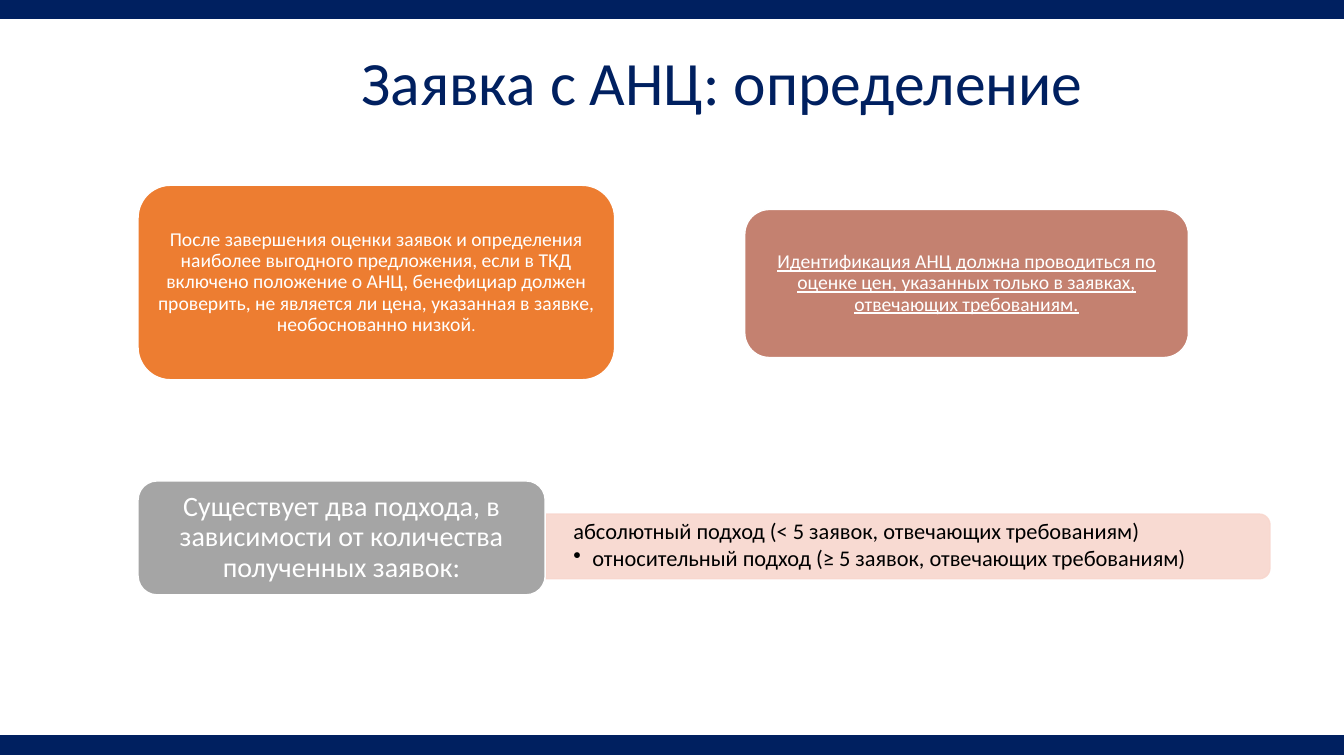
import pptx
import pptx.util
import pptx.dml.color
import pptx.enum.shapes
import pptx.enum.text
import pptx.oxml
import pptx.oxml.ns

Cm = pptx.util.Cm
Pt = pptx.util.Pt
RGBColor = pptx.dml.color.RGBColor
SHAPES = pptx.enum.shapes.MSO_SHAPE
ALIGN = pptx.enum.text.PP_ALIGN

NAVY = RGBColor(0x00, 0x20, 0x60)
ORANGE = RGBColor(0xED, 0x7D, 0x31)
ROSE = RGBColor(0xC4, 0x81, 0x70)
GRAY = RGBColor(0xA5, 0xA5, 0xA5)
PEACH = RGBColor(0xF8, 0xD7, 0xCE)
WHITE = RGBColor(0xFF, 0xFF, 0xFF)
BLACK = RGBColor(0x00, 0x00, 0x00)


def add_block(kind, left, top, width, height, fill, line):
    block = slide.shapes.add_shape(kind, Cm(left), Cm(top), Cm(width), Cm(height))
    block.shadow.inherit = False
    block.fill.solid()
    block.fill.fore_color.rgb = fill
    block.line.color.rgb = line
    block.line.width = Pt(1)
    return block


def write_text(box, lines, size, color, align, inset_x, inset_y):
    frame = box.text_frame
    frame.word_wrap = True
    frame.vertical_anchor = pptx.enum.text.MSO_ANCHOR.MIDDLE
    frame.margin_left = frame.margin_right = Cm(inset_x)
    frame.margin_top = frame.margin_bottom = Cm(inset_y)
    frame.text = "\n".join(lines)
    for para in frame.paragraphs:
        para.alignment = align
        para.line_spacing = 0.9
        for span in para.runs:
            span.font.name = "Calibri"
            span.font.size = Pt(size)
            span.font.color.rgb = color
    return frame.paragraphs


deck = pptx.Presentation()
deck.slide_width = Cm(33.87)
deck.slide_height = Cm(19.05)
slide = deck.slides.add_slide(deck.slide_layouts[6])

for top in (0, 18.55):
    add_block(SHAPES.RECTANGLE, 0, top, 33.87, 0.46, NAVY, NAVY)

title = slide.shapes.add_textbox(Cm(5.23), Cm(0.94), Cm(26.31), Cm(2.41))
write_text(title, ["Заявка с АНЦ: определение "], 44, NAVY, ALIGN.CENTER, 0.25, 0.13)

approach_bar = add_block(SHAPES.ROUND_2_SAME_RECTANGLE, 22.07, 4.65, 1.63, 18.24, PEACH, PEACH)
approach_bar.rotation = 90
for color in approach_bar.element.spPr.iter(pptx.oxml.ns.qn("a:srgbClr")):
    color.append(pptx.oxml.parse_xml(
        '<a:alpha xmlns:a="http://schemas.openxmlformats.org/drawingml/2006/main" val="90000"/>'))

approaches = slide.shapes.add_textbox(Cm(13.77), Cm(13.03), Cm(18.16), Cm(1.45))
absolute, relative = write_text(
    approaches,
    ["абсолютный подход (< 5 заявок, отвечающих требованиям)",
     "относительный подход (≥ 5 заявок, отвечающих требованиям)"],
    16, BLACK, ALIGN.LEFT, 0.68, 0)
absolute.space_after = Pt(2.4)
properties = relative._p.get_or_add_pPr()
properties.set("marL", str(Cm(0.48)))
properties.set("indent", str(-Cm(0.48)))
properties.append(pptx.oxml.parse_xml(
    '<a:buChar xmlns:a="http://schemas.openxmlformats.org/drawingml/2006/main" char="•"/>'))

cards = [
    (3.48, 4.67, 12.01, 4.9, ORANGE, 14, False,
     "После завершения оценки заявок и определения наиболее выгодного предложения, "
     "если в ТКД включено положение о АНЦ, бенефициар должен проверить, не является ли "
     "цена, указанная в заявке, необоснованно низкой"),
    (18.77, 5.28, 11.18, 3.73, ROSE, 14, True,
     "Идентификация АНЦ должна проводиться по оценке цен, указанных только в заявках, "
     "отвечающих требованиям."),
    (3.48, 12.12, 10.26, 2.87, GRAY, 20, False,
     "Существует два подхода, в зависимости от количества полученных заявок:"),
]
card_paras = []
for left, top, width, height, fill, size, underlined, text in cards:
    card = add_block(SHAPES.ROUNDED_RECTANGLE, left, top, width, height, fill, WHITE)
    para = write_text(card, [text], size, WHITE, ALIGN.CENTER, 0.16, 0.08)[0]
    if underlined:
        para.runs[0].font.underline = True
    card_paras.append(para)

full_stop = card_paras[0].add_run()
full_stop.text = "."
full_stop.font.name = "Calibri"
full_stop.font.size = Pt(12)
full_stop.font.color.rgb = WHITE

deck.save("out.pptx")
